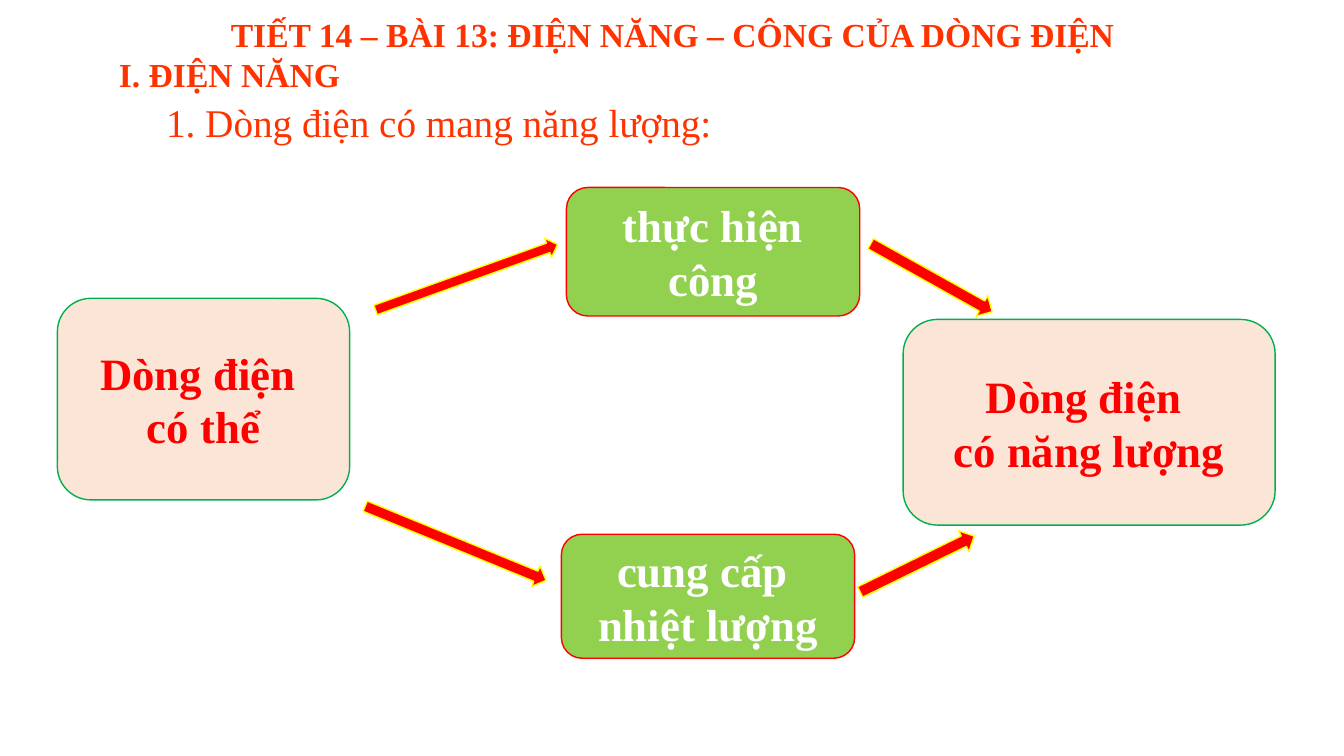
from dataclasses import dataclass

from pptx import Presentation
from pptx.dml.color import RGBColor
from pptx.enum.shapes import MSO_SHAPE
from pptx.enum.text import MSO_ANCHOR, MSO_AUTO_SIZE, PP_ALIGN
from pptx.shapes.autoshape import Shape
from pptx.slide import Slide
from pptx.util import Pt

RED = RGBColor(0xFF, 0x00, 0x00)
ORANGE = RGBColor(0xFF, 0x33, 0x00)
YELLOW = RGBColor(0xFF, 0xFF, 0x00)
WHITE = RGBColor(0xFF, 0xFF, 0xFF)
PEACH = RGBColor(0xFB, 0xE5, 0xD6)
LIGHT_GREEN = RGBColor(0x92, 0xD0, 0x50)
DARK_GREEN = RGBColor(0x00, 0xB0, 0x50)
FONT_NAME = "Times New Roman"


@dataclass(frozen=True)
class Frame:
    """Position and size in points."""
    left: float
    top: float
    width: float
    height: float

    def lengths(self) -> tuple[Pt, Pt, Pt, Pt]:
        return Pt(self.left), Pt(self.top), Pt(self.width), Pt(self.height)


@dataclass(frozen=True)
class Style:
    fill: RGBColor
    line: RGBColor
    text: RGBColor


@dataclass(frozen=True)
class Node:
    text: str
    frame: Frame
    style: Style


@dataclass(frozen=True)
class Arrow:
    frame: Frame
    rotation: float


@dataclass(frozen=True)
class Heading:
    text: str
    frame: Frame
    size: float
    bold: bool
    space_before: float


CURRENT = Style(PEACH, DARK_GREEN, RED)
EFFECT = Style(LIGHT_GREEN, RED, WHITE)
ARROW_STYLE = Style(RED, YELLOW, WHITE)

TITLE = Heading("TIẾT 14 – BÀI 13: ĐIỆN NĂNG – CÔNG CỦA DÒNG ĐIỆN",
                Frame(157.7, 6.5, 729.4, 36), 24, True, 0)
HEADINGS = [
    Heading("1. Dòng điện có mang năng lượng:",
            Frame(111.6, 67, 527.8, 41), 28, False, 0),
    Heading("I. ĐIỆN NĂNG", Frame(77.8, 35.3, 527.8, 36), 24, True, 0),
]
NODES = [
    Node("Dòng điện \ncó thể", Frame(41, 213.1, 208.8, 144), CURRENT),
    Node("Dòng điện \ncó năng lượng", Frame(645.1, 228.2, 265.7, 146.9), CURRENT),
    Node("cung cấp \nnhiệt lượng", Frame(401, 381.6, 209.5, 88.6), EFFECT),
    Node("thực hiện công", Frame(404.6, 133.9, 209.5, 91.8), EFFECT),
]
ARROWS = [
    Arrow(Frame(264.2, 190.8, 138.2, 14.4), 340.2),
    Arrow(Frame(615.6, 190.1, 99.4, 16.6), 29.2),
    Arrow(Frame(255.6, 380.2, 139.7, 15.8), 22.3),
    Arrow(Frame(609.8, 394.6, 90.7, 16.6), 333.9),
]


def write_text(box: Shape, text: str, size: float, bold: bool, color: RGBColor,
               alignment: PP_ALIGN, anchor: MSO_ANCHOR) -> None:
    text_frame = box.text_frame
    text_frame.text = text
    text_frame.word_wrap = True
    text_frame.vertical_anchor = anchor
    for para in text_frame.paragraphs:
        para.alignment = alignment
        para.line_spacing = 1.0
        for span in para.runs:
            span.font.name = FONT_NAME
            span.font.size = Pt(size)
            span.font.bold = bold
            span.font.color.rgb = color


def format_heading(box: Shape, heading: Heading) -> None:
    box.left, box.top, box.width, box.height = heading.frame.lengths()
    write_text(box, heading.text, heading.size, heading.bold, ORANGE,
               PP_ALIGN.LEFT, MSO_ANCHOR.TOP)
    box.text_frame.auto_size = MSO_AUTO_SIZE.SHAPE_TO_FIT_TEXT
    box.text_frame.paragraphs[0].space_before = Pt(heading.space_before)


def add_styled_shape(page: Slide, kind: MSO_SHAPE, frame: Frame, style: Style) -> Shape:
    shape = page.shapes.add_shape(kind, *frame.lengths())
    shape.shadow.inherit = False
    shape.fill.solid()
    shape.fill.fore_color.rgb = style.fill
    shape.line.color.rgb = style.line
    shape.line.width = Pt(1)
    return shape


def add_node(page: Slide, node: Node) -> None:
    box = add_styled_shape(page, MSO_SHAPE.ROUNDED_RECTANGLE, node.frame, node.style)
    write_text(box, node.text, 32, True, node.style.text,
               PP_ALIGN.CENTER, MSO_ANCHOR.MIDDLE)


def add_arrow(page: Slide, arrow: Arrow) -> None:
    shape = add_styled_shape(page, MSO_SHAPE.RIGHT_ARROW, arrow.frame, ARROW_STYLE)
    shape.rotation = arrow.rotation


def main() -> None:
    deck = Presentation()
    deck.slide_width, deck.slide_height = Pt(960), Pt(540)
    page = deck.slides.add_slide(deck.slide_layouts.get_by_name("Title Only"))
    for node in NODES:
        add_node(page, node)
    for arrow in ARROWS:
        add_arrow(page, arrow)
    format_heading(page.shapes.title, TITLE)
    for heading in HEADINGS:
        format_heading(page.shapes.add_textbox(*heading.frame.lengths()), heading)
    deck.save("out.pptx")


if __name__ == "__main__":
    main()
